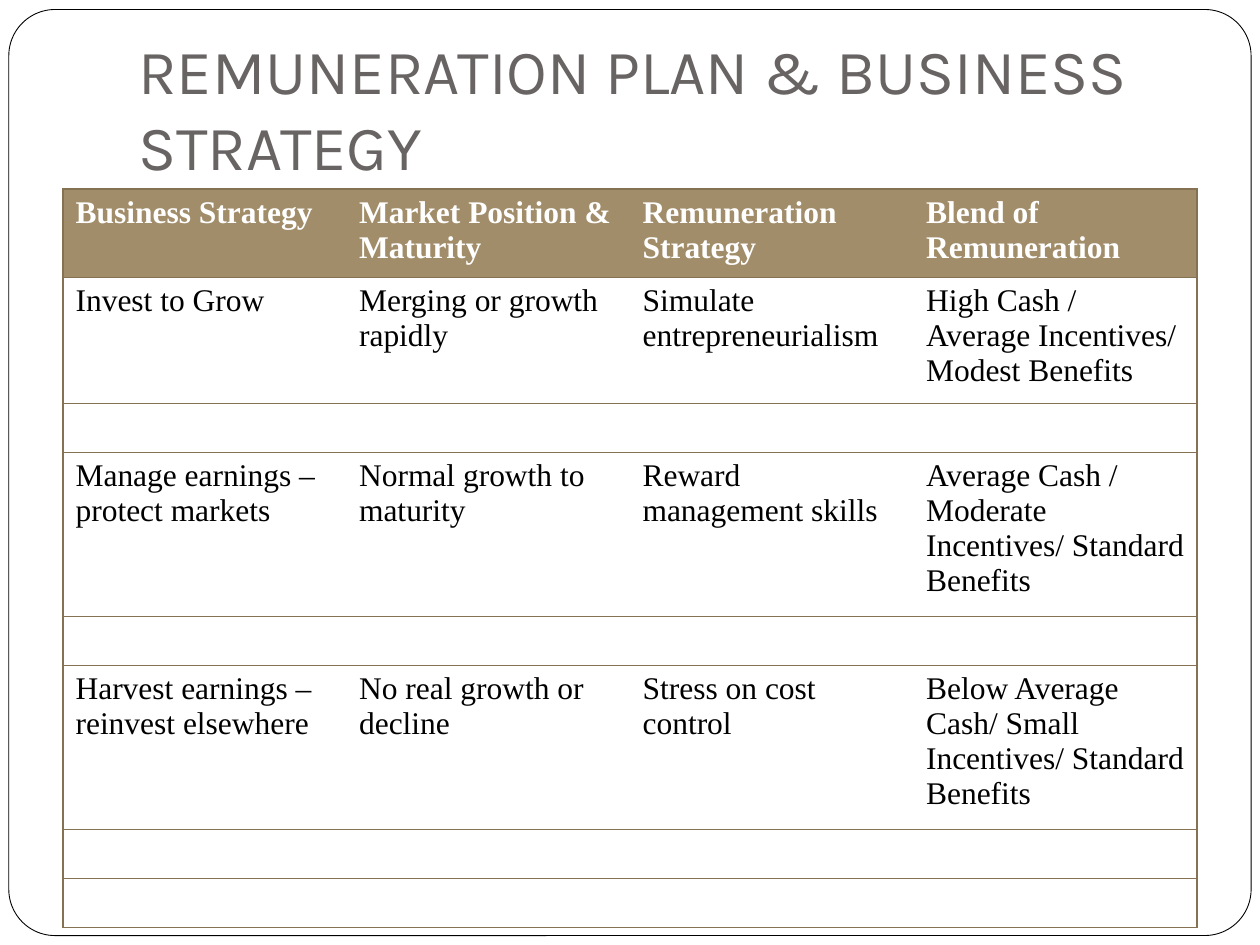
import pptx
import pptx.dml.color
import pptx.enum.shapes
import pptx.enum.text
import pptx.oxml.ns
import pptx.util
from lxml import etree

COLORS = {
    "paper": "FFFFFF",
    "ink": "000000",
    "title": "696464",
    "header": "A28D6A",
    "rule": "847253",
}
SLIDE_WIDTH = pptx.util.Inches(10)
SLIDE_HEIGHT = pptx.util.Inches(7.5)
HEADINGS = [
    "Business Strategy",
    "Market Position & Maturity",
    "Remuneration Strategy",
    "Blend of Remuneration",
]
STRATEGIES = [
    [
        "Invest to Grow",
        "Merging or growth rapidly",
        "Simulate entrepreneurialism",
        "High Cash / Average Incentives/ Modest Benefits",
    ],
    [
        "Manage earnings – protect markets",
        "Normal growth to maturity",
        "Reward management skills",
        "Average Cash / Moderate Incentives/ Standard Benefits",
    ],
    [
        "Harvest earnings – reinvest elsewhere",
        "No real growth or decline",
        "Stress on cost control",
        "Below Average Cash/ Small Incentives/ Standard Benefits",
    ],
]
SPACER = [""] * len(HEADINGS)
ROW_HEIGHTS = [0.69, 0.99, 0.39, 1.28, 0.39, 1.28, 0.39, 0.39]


def rgb(name):
    """Return the named colour."""
    return pptx.dml.color.RGBColor.from_string(COLORS[name])


def area(left, top, width, height):
    """Turn shares of the slide into a position and a size."""
    return (
        round(left * SLIDE_WIDTH),
        round(top * SLIDE_HEIGHT),
        round(width * SLIDE_WIDTH),
        round(height * SLIDE_HEIGHT),
    )


def write(frame, text, font="Times New Roman", size=18, color="ink", bold=False):
    """Put formatted text in the first paragraph of a frame."""
    frame.word_wrap = True
    run = frame.paragraphs[0].add_run()
    run.text = text
    run.font.name = font
    run.font.size = pptx.util.Pt(size)
    run.font.bold = bold
    run.font.color.rgb = rgb(color)


def add_border(slide):
    """Draw the rounded frame around the slide."""
    border = slide.shapes.add_shape(
        pptx.enum.shapes.MSO_SHAPE.ROUNDED_RECTANGLE,
        *area(0.007, 0.01, 0.986, 0.98),
    )
    border.adjustments[0] = 0.05
    border.shadow.inherit = False
    border.fill.solid()
    border.fill.fore_color.rgb = rgb("paper")
    border.line.color.rgb = rgb("ink")
    border.line.width = pptx.util.Pt(0.5)


def add_title(slide, text):
    """Add the heading above the table."""
    frame = slide.shapes.add_textbox(*area(0.1, 0.04, 0.85, 0.167)).text_frame
    frame.vertical_anchor = pptx.enum.text.MSO_ANCHOR.BOTTOM
    frame.margin_bottom = pptx.util.Inches(0.1)
    write(frame, text, font="Karla", size=36, color="title")


def rule_cell(cell, ruled_sides):
    """Rule the given sides of a cell and leave the others open."""
    properties = cell._tc.get_or_add_tcPr()
    qn = pptx.oxml.ns.qn
    for side in "LRTB":
        edge = etree.SubElement(properties, qn(f"a:ln{side}"))
        if side in ruled_sides:
            edge.set("w", str(pptx.util.Pt(0.75)))
            paint = etree.SubElement(edge, qn("a:solidFill"))
            etree.SubElement(paint, qn("a:srgbClr"), val=COLORS["rule"])
        else:
            etree.SubElement(edge, qn("a:noFill"))


def fill_cell(cell, text, is_header):
    """Colour a cell and write its text."""
    cell.fill.solid()
    cell.fill.fore_color.rgb = rgb("header" if is_header else "paper")
    if text:
        color = "paper" if is_header else "ink"
        write(cell.text_frame, text, color=color, bold=is_header)
    else:
        cell.margin_top = cell.margin_bottom = pptx.util.Inches(0.03)


def add_strategy_table(slide):
    """Add the table that matches strategies with remuneration."""
    rows = [HEADINGS]
    for strategy in STRATEGIES:
        rows += [strategy, SPACER]
    rows.append(SPACER)
    last_column = len(HEADINGS) - 1
    table = slide.shapes.add_table(
        len(rows), len(HEADINGS), *area(0.05, 0.2, 0.9, 0.78)
    ).table
    table.horz_banding = False
    for row_index, texts in enumerate(rows):
        table.rows[row_index].height = pptx.util.Inches(ROW_HEIGHTS[row_index])
        for column, text in enumerate(texts):
            cell = table.cell(row_index, column)
            sides = "TB" + "L" * (column == 0) + "R" * (column == last_column)
            rule_cell(cell, sides)
            fill_cell(cell, text, row_index == 0)


def main():
    """Build and save the slide."""
    deck = pptx.Presentation()
    deck.slide_width = SLIDE_WIDTH
    deck.slide_height = SLIDE_HEIGHT
    slide = deck.slides.add_slide(deck.slide_layouts[6])
    add_border(slide)
    add_title(slide, "REMUNERATION PLAN & BUSINESS STRATEGY")
    add_strategy_table(slide)
    deck.save("out.pptx")


if __name__ == "__main__":
    main()
